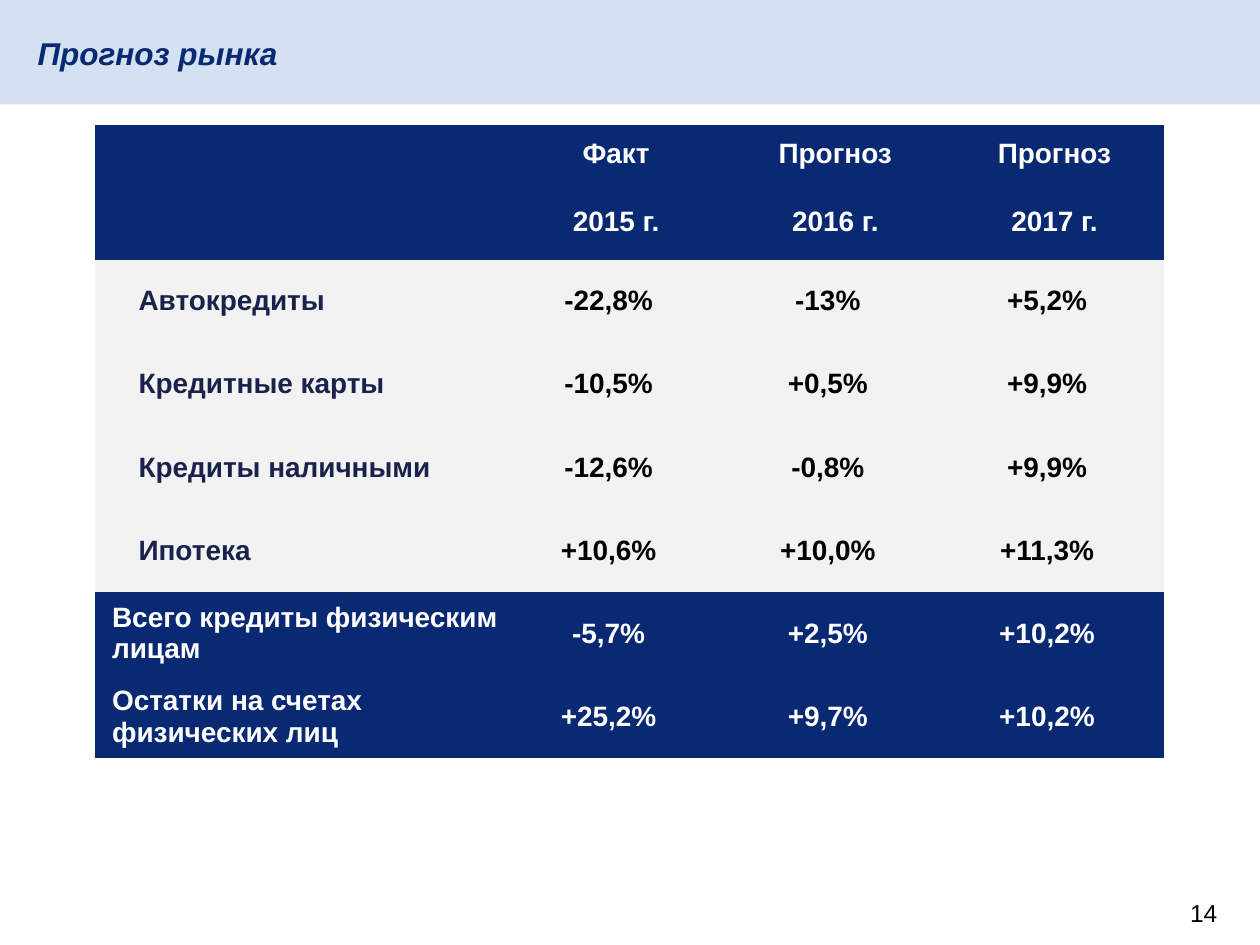
"""Build the market forecast slide with its table of growth rates."""
from pptx import Presentation
from pptx.dml.color import RGBColor
from pptx.enum.shapes import MSO_SHAPE
from pptx.enum.text import MSO_ANCHOR, PP_ALIGN
from pptx.oxml.ns import qn
from pptx.util import Inches, Pt

NAVY = RGBColor(0x0A, 0x29, 0x73)
INK = RGBColor(0x19, 0x22, 0x4A)
PALE_BLUE = RGBColor(0xD4, 0xE1, 0xF0)
LIGHT_GREY = RGBColor(0xF2, 0xF2, 0xF2)
WHITE = RGBColor(0xFF, 0xFF, 0xFF)
BLACK = RGBColor(0, 0, 0)
NO_STYLE = "{2D5ABB26-0587-4C30-8999-92F81FD0307C}"

FORECAST = [
    ("", "Факт", "Прогноз", "Прогноз"),
    ("", "2015 г.", "2016 г.", "2017 г."),
    ("Автокредиты", "-22,8%", "-13%", "+5,2%"),
    ("Кредитные карты", "-10,5%", "+0,5%", "+9,9%"),
    ("Кредиты наличными", "-12,6%", "-0,8%", "+9,9%"),
    ("Ипотека", "+10,6%", "+10,0%", "+11,3%"),
    ("Всего кредиты физическим лицам", "-5,7%", "+2,5%", "+10,2%"),
    ("Остатки на счетах физических лиц", "+25,2%", "+9,7%", "+10,2%"),
]
HEADER_ROWS = 2
FIRST_TOTAL = 6
COLUMN_WIDTHS = [3.27] + [1.74] * 3
ROW_HEIGHTS = [0.47, 0.6] + [0.66] * 6


def write(frame, text, size, color, align=PP_ALIGN.LEFT, bold=False, italic=False):
    frame.word_wrap = True
    paragraph = frame.paragraphs[0]
    paragraph.text = text
    paragraph.alignment = align
    font = paragraph.font
    font.name, font.size = "Arial", Pt(size)
    font.bold, font.italic = bold, italic
    font.color.rgb = color


prs = Presentation()
prs.slide_width, prs.slide_height = Inches(10), Inches(7.5)
slide = prs.slides.add_slide(prs.slide_layouts[6])

band = slide.shapes.add_shape(MSO_SHAPE.RECTANGLE, 0, 0, Inches(10), Inches(0.83))
band.shadow.inherit = False
band.fill.solid()
band.fill.fore_color.rgb = PALE_BLUE
band.line.fill.background()

title = slide.shapes.add_textbox(Inches(0.2), Inches(0.22), Inches(9.61), Inches(0.4))
write(title.text_frame, "Прогноз рынка", 18, NAVY, bold=True, italic=True)

page_number = slide.shapes.add_textbox(Inches(7.79), Inches(7.08), Inches(1.97), Inches(0.39))
write(page_number.text_frame, "14", 14, BLACK, PP_ALIGN.RIGHT)

forecast_frame = slide.shapes.add_table(
    len(FORECAST), len(COLUMN_WIDTHS), Inches(0.75), Inches(0.99), Inches(8.5), Inches(5.01))
forecast = forecast_frame.table
forecast._tbl.tblPr.find(qn("a:tableStyleId")).text = NO_STYLE
for column, width in zip(forecast.columns, COLUMN_WIDTHS):
    column.width = Inches(width)
for row, height in zip(forecast.rows, ROW_HEIGHTS):
    row.height = Inches(height)

for r, values in enumerate(FORECAST):
    is_header = r < HEADER_ROWS
    is_product = HEADER_ROWS <= r < FIRST_TOTAL
    for c, value in enumerate(values):
        cell = forecast.cell(r, c)
        cell.fill.solid()
        cell.fill.fore_color.rgb = LIGHT_GREY if is_product else NAVY
        cell.vertical_anchor = MSO_ANCHOR.MIDDLE
        cell.margin_top = cell.margin_bottom = 0
        cell.margin_left = cell.margin_right = 0
        if c == 0:
            cell.margin_left = Inches(0.35 if is_product else 0.14)
            color, align = INK, PP_ALIGN.LEFT
        else:
            cell.margin_right = Inches(0 if is_header else 0.12)
            color, align = BLACK, PP_ALIGN.CENTER
        write(cell.text_frame, value, 16, color if is_product else WHITE, align, bold=True)

prs.save("out.pptx")
